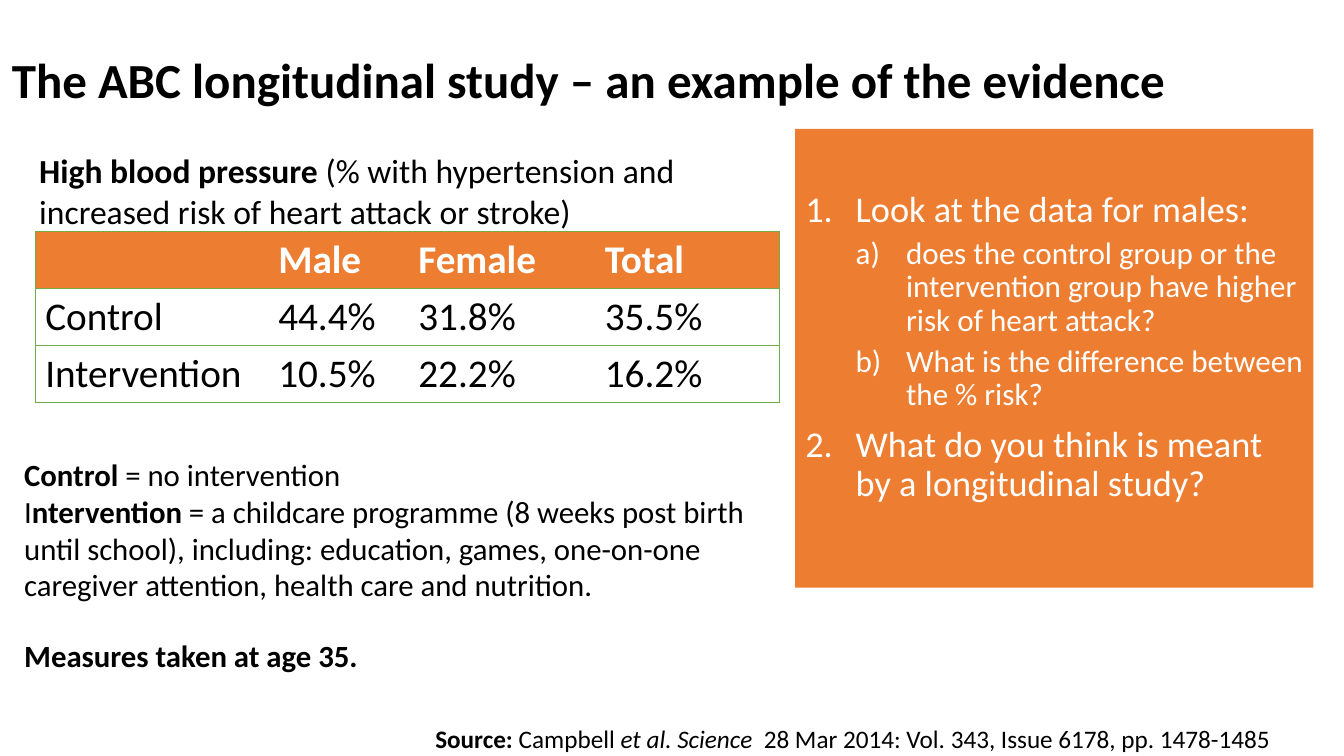
import pptx
import pptx.dml.color
import pptx.enum.text
import pptx.oxml
import pptx.oxml.ns
import pptx.util

Cm = pptx.util.Cm
Pt = pptx.util.Pt
THEME = {
    "font": "Calibri",
    "black": pptx.dml.color.RGBColor.from_string("000000"),
    "white": pptx.dml.color.RGBColor.from_string("FFFFFF"),
    "orange": pptx.dml.color.RGBColor.from_string("ED7D31"),
    "green": "70AD47",
    "title": Pt(35),
    "table": Pt(28),
    "question": Pt(25.9),
    "subquestion": Pt(22.2),
    "caption": Pt(24),
    "notes": Pt(22),
    "source": Pt(18),
}


def write_runs(paragraph, runs, size, color="black"):
    for text, style in runs:
        run = paragraph.add_run()
        run.text = text
        formats = {
            "name": THEME["font"],
            "size": THEME[size],
            "bold": "b" in style,
            "italic": "i" in style,
        }
        for attribute, value in formats.items():
            setattr(run.font, attribute, value)
        run.font.color.rgb = THEME[color]


def place(shape, left, top, width, height):
    box = {"left": left, "top": top, "width": width, "height": height}
    for attribute, value in box.items():
        setattr(shape, attribute, Cm(value))


presentation = pptx.Presentation()
presentation.slide_width = Cm(33.87)
presentation.slide_height = Cm(19.05)
slide = presentation.slides.add_slide(presentation.slide_layouts[1])

title = slide.shapes.title
place(title, 0, 0.79, 29.69, 2.08)
title.text_frame.auto_size = pptx.enum.text.MSO_AUTO_SIZE.NONE
title.text_frame.vertical_anchor = pptx.enum.text.MSO_ANCHOR.BOTTOM
heading = title.text_frame.paragraphs[0]
heading.alignment = pptx.enum.text.PP_ALIGN.CENTER
heading.line_spacing = 0.9
write_runs(heading, [("The ABC longitudinal study – an example of the evidence", "b")], "title")

questions = slide.placeholders[1]
place(questions, 20.04, 3.25, 13.06, 11.56)
questions.fill.solid()
questions.fill.fore_color.rgb = THEME["orange"]
questions.text_frame.auto_size = pptx.enum.text.MSO_AUTO_SIZE.NONE
questions.text_frame.margin_top = Cm(1.57)
question_list = [
    (0, "Look at the data for males:"),
    (1, "does the control group or the intervention group have higher risk of heart attack?"),
    (1, "What is the difference between the % risk?"),
    (0, "What do you think is meant by a longitudinal study?"),
]
levels = [
    {"size": "question", "numbering": "arabicPeriod", "before": 10},
    {"size": "subquestion", "numbering": "alphaLcParenR", "before": 5},
]
for index, (level, text) in enumerate(question_list):
    frame = questions.text_frame
    paragraph = frame.add_paragraph() if index else frame.paragraphs[0]
    paragraph.level = level
    properties = paragraph._p.get_or_add_pPr()
    properties.set("marL", str(Cm(1.27 * (level + 1))))
    properties.set("indent", str(Cm(-1.27)))
    bullet = pptx.oxml.parse_xml(
        f'<a:buAutoNum {pptx.oxml.ns.nsdecls("a")} type="{levels[level]["numbering"]}"/>'
    )
    properties.append(bullet)
    paragraph.line_spacing = 0.9
    paragraph.space_before = Pt(levels[level]["before"] if index else 0)
    write_runs(paragraph, [(text, "")], levels[level]["size"], "white")

text_boxes = [
    ((0.36, 11.35, 18.82, 6.68), "notes", [
        [("Control", "b"), (" = no intervention", "")],
        [
            ("I", ""),
            ("ntervention", "b"),
            (" = a childcare programme (8 weeks post birth until school), including: "
             "education, games, one-on-one caregiver attention, health care and nutrition.", ""),
        ],
        [("Measures taken at age 35.", "b")],
    ]),
    ((10.72, 18.11, 23.16, 1.02), "source", [
        [
            ("Source: ", "b"),
            ("Campbell ", ""),
            ("et al. Science ", "i"),
            (" 28 Mar 2014: Vol. 343, Issue 6178, pp. 1478-1485", ""),
        ],
    ]),
    ((0.74, 3.66, 18.72, 2.31), "caption", [
        [
            ("High blood pressure ", "b"),
            ("(% with hypertension and increased risk of heart attack or stroke)", ""),
        ],
    ]),
]
for bounds, size, paragraphs in text_boxes:
    text_box = slide.shapes.add_textbox(*[Cm(length) for length in bounds])
    frame = text_box.text_frame
    frame.word_wrap = True
    for index, runs in enumerate(paragraphs):
        paragraph = frame.add_paragraph() if index else frame.paragraphs[0]
        paragraph.space_before = Pt(24 if index == 2 else 0)
        write_runs(paragraph, runs, size)

results = [
    ["", "Male", "Female", "Total"],
    ["Control", "44.4%", "31.8%", "35.5%"],
    ["Intervention", "10.5%", "22.2%", "16.2%"],
]
column_widths = [5.87, 3.53, 4.7, 4.64]
table_frame = slide.shapes.add_table(
    len(results), len(column_widths), Cm(0.89), Cm(5.82), Cm(sum(column_widths)), Cm(4.32)
)
table = table_frame.table
table.horz_banding = False
style = table._tbl.tblPr.find(pptx.oxml.ns.qn("a:tableStyleId"))
style.text = "{2D5ABB26-0587-4C30-8999-92F81FD0307C}"
for column, width in zip(table.columns, column_widths):
    column.width = Cm(width)
for row_index, row in enumerate(results):
    table.rows[row_index].height = Cm(1.44)
    for column_index, text in enumerate(row):
        cell = table.cell(row_index, column_index)
        is_header = row_index == 0
        if is_header:
            cell.fill.solid()
            cell.fill.fore_color.rgb = THEME["orange"]
        else:
            cell.fill.background()
        if text:
            write_runs(
                cell.text_frame.paragraphs[0],
                [(text, "b" if is_header else "")],
                "table",
                "white" if is_header else "black",
            )
        sides = ["T", "B"]
        if column_index == 0:
            sides.insert(0, "L")
        if column_index == len(row) - 1:
            sides.insert(0, "R")
        for position, side in enumerate(sides):
            border = pptx.oxml.parse_xml(
                f'<a:ln{side} {pptx.oxml.ns.nsdecls("a")} w="{Pt(0.5)}"><a:solidFill>'
                f'<a:srgbClr val="{THEME["green"]}"/></a:solidFill></a:ln{side}>'
            )
            cell._tc.get_or_add_tcPr().insert(position, border)

presentation.save("out.pptx")
